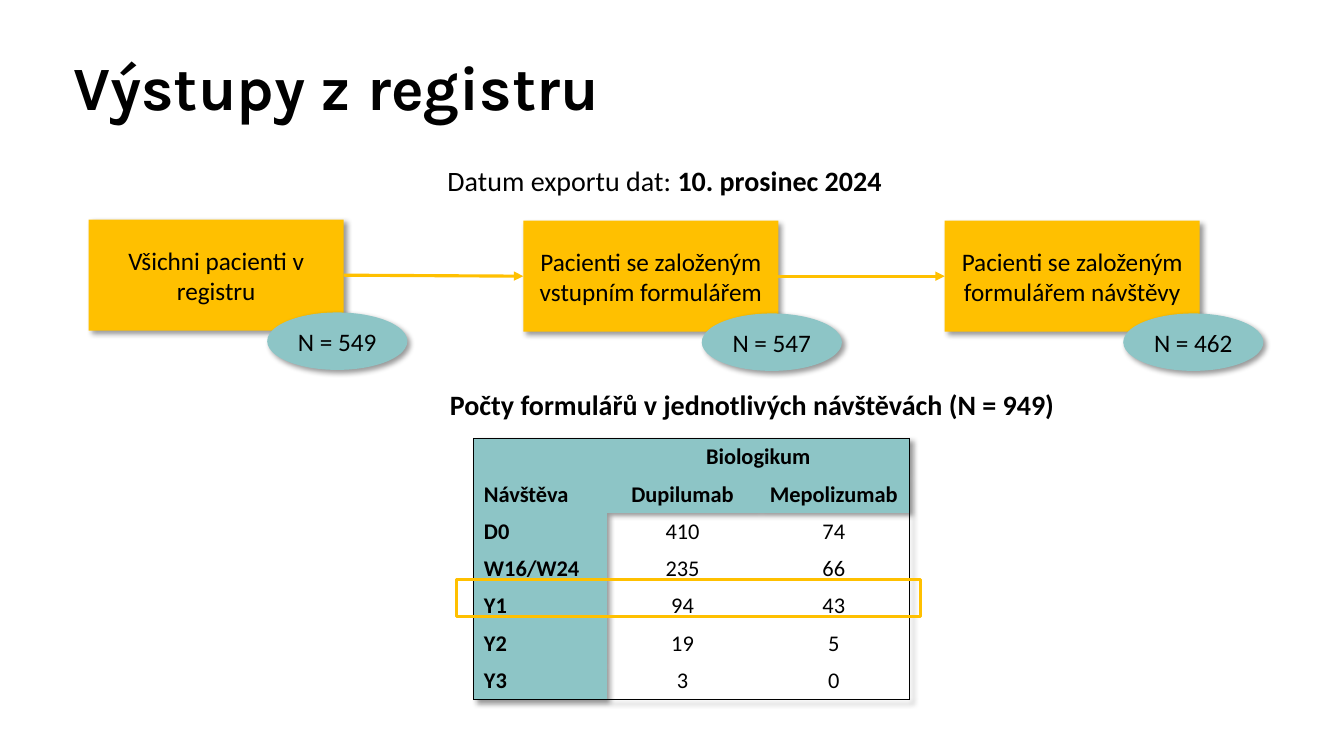
from pptx import Presentation
from pptx.dml.color import RGBColor
from pptx.enum.shapes import MSO_SHAPE as Kind, MSO_CONNECTOR as Link
from pptx.enum.text import PP_ALIGN as Align, MSO_ANCHOR as Anchor
from pptx.oxml import parse_xml
from pptx.oxml.ns import nsdecls
from pptx.util import Inches, Pt

GOLD, TEAL, BLACK = "FFC000", "8DC5C6", "000000"
NS = nsdecls("a")
rgb = RGBColor.from_string

deck = Presentation()
deck.slide_width, deck.slide_height = Inches(13.33), Inches(7.5)
slide = deck.slides.add_slide(deck.slide_layouts[6])
shapes = slide.shapes


def write(frame, runs, align=Align.LEFT, **form):
    frame.word_wrap = True
    par = frame.paragraphs[0]
    par.alignment = align
    for text, bold in runs:
        run = par.add_run()
        run.text = text
        run.font.color.rgb = rgb(BLACK)
        for key, val in {"name": "Calibri", "bold": bold, **form}.items():
            setattr(run.font, key, val)
    return par


def shade(props):
    props.append(parse_xml(
        f'<a:outerShdw {NS} blurRad="50800" dist="38100" dir="2700000" '
        'algn="tl" rotWithShape="0"><a:srgbClr val="000000">'
        '<a:alpha val="40000"/></a:srgbClr></a:outerShdw>'))


# Title
box = shapes.add_textbox(Inches(0.63), Inches(0.4), Inches(12.06), Inches(0.99))
box.text_frame.vertical_anchor = Anchor.MIDDLE
par = write(box.text_frame, [("Výstupy z registru", True)],
            name="Karla", size=Pt(44))
par.line_spacing = 0.9

# Patient groups with their counts
groups = [(0.88, 2.18, "Všichni pacienti v registru", 549),
          (5.19, 2.19, "Pacienti se založeným vstupním formulářem", 547),
          (9.37, 2.19, "Pacienti se založeným formulářem návštěvy", 462)]
steps = []
for left, top, label, count in groups:
    parts = [(Kind.RECTANGLE, left, top, 2.53, 1.1, GOLD, label),
             (Kind.OVAL, left + 1.77, top + 0.92, 1.39, 0.57, TEAL,
              f"N = {count}")]
    for kind, x, y, wide, high, tint, text in parts:
        part = shapes.add_shape(kind, Inches(x), Inches(y),
                                Inches(wide), Inches(high))
        part.fill.solid()
        part.fill.fore_color.rgb = rgb(tint)
        part.line.fill.background()
        part.shadow.inherit = False
        shade(part.element.spPr.find("{*}effectLst"))
        part.text_frame.vertical_anchor = Anchor.MIDDLE
        write(part.text_frame, [(text, False)], Align.CENTER, size=Pt(18))
        if kind == Kind.RECTANGLE:
            steps.append(part)

# Arrows between the groups
for start, end in zip(steps, steps[1:]):
    arrow = shapes.add_connector(Link.STRAIGHT, 0, 0, 0, 0)
    arrow.begin_connect(start, 3)
    arrow.end_connect(end, 1)
    arrow.line.color.rgb = rgb(GOLD)
    arrow.line.width = Pt(2.25)
    arrow.line._get_or_add_ln().append(
        parse_xml(f'<a:tailEnd {NS} type="triangle"/>'))
    arrow.element.spPr.append(parse_xml(f"<a:effectLst {NS}/>"))

# Table of forms per visit
rows = [("", "Biologikum", ""),
        ("Návštěva", "Dupilumab", "Mepolizumab"),
        ("D0", "410", "74"),
        ("W16/W24", "235", "66"),
        ("Y1", "94", "43"),
        ("Y2", "19", "5"),
        ("Y3", "3", "0")]
last = len(rows) - 1
table = shapes.add_table(len(rows), 3, Inches(4.7), Inches(4.35),
                         Inches(4.32), Inches(2.59)).table
table.first_row = table.horz_banding = False
props = table._tbl.tblPr
props.find("{*}tableStyleId").text = "{2D5ABB26-0587-4C30-8999-92F81FD0307C}"
glow = parse_xml(f"<a:effectLst {NS}/>")
shade(glow)
props.insert(0, glow)
for col, wide in zip(table.columns, (1.32, 1.5, 1.5)):
    col.width = Inches(wide)
for row in table.rows:
    row.height = Inches(0.37)
table.cell(0, 1).merge(table.cell(0, 2))

for r, row in enumerate(rows):
    for c, text in enumerate(row):
        cell = table.cell(r, c)
        head = r < 2 or c == 0
        cell.vertical_anchor = Anchor.MIDDLE
        if text:
            write(cell.text_frame, [(text, head)],
                  Align.CENTER if c else Align.LEFT, size=Pt(16))
        else:
            cell.margin_top = cell.margin_bottom = 0
        # Outer frame only
        sides = {"L": c == 0, "R": c + cell.span_width == 3,
                 "T": r == 0, "B": r == last}
        for side, shown in sides.items():
            if shown:
                cell._tc.get_or_add_tcPr().append(parse_xml(
                    f'<a:ln{side} {NS} w="12700"><a:solidFill>'
                    f'<a:srgbClr val="{BLACK}"/></a:solidFill></a:ln{side}>'))
        if head:
            cell.fill.solid()
            cell.fill.fore_color.rgb = rgb(TEAL)
        else:
            cell.fill.background()

# Table heading
box = shapes.add_textbox(Inches(4.12), Inches(3.8), Inches(6.68), Inches(0.44))
write(box.text_frame,
      [("Počty formulářů v jednotlivých návštěvách (N = 949)", True)],
      Align.CENTER, size=Pt(20))

# Frame around the first year
frame = shapes.add_shape(Kind.RECTANGLE, Inches(4.53), Inches(5.75),
                         Inches(4.6), Inches(0.37))
frame.fill.background()
frame.line.color.rgb = rgb(GOLD)
frame.line.width = Pt(2.25)
frame.shadow.inherit = False

# Export date
box = shapes.add_textbox(Inches(4.34), Inches(1.57), Inches(4.76), Inches(0.44))
write(box.text_frame,
      [("Datum exportu dat: ", False), ("10. prosinec 2024", True)],
      size=Pt(20))

deck.save("out.pptx")
